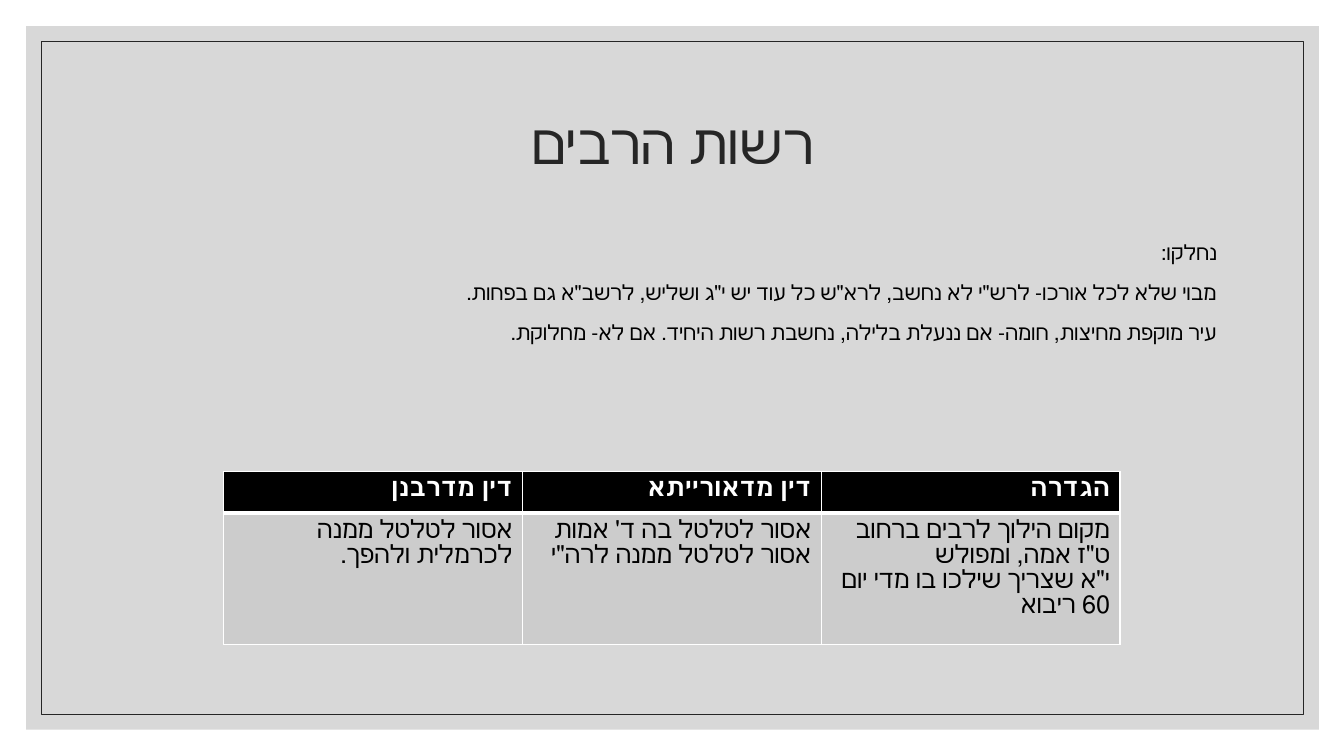
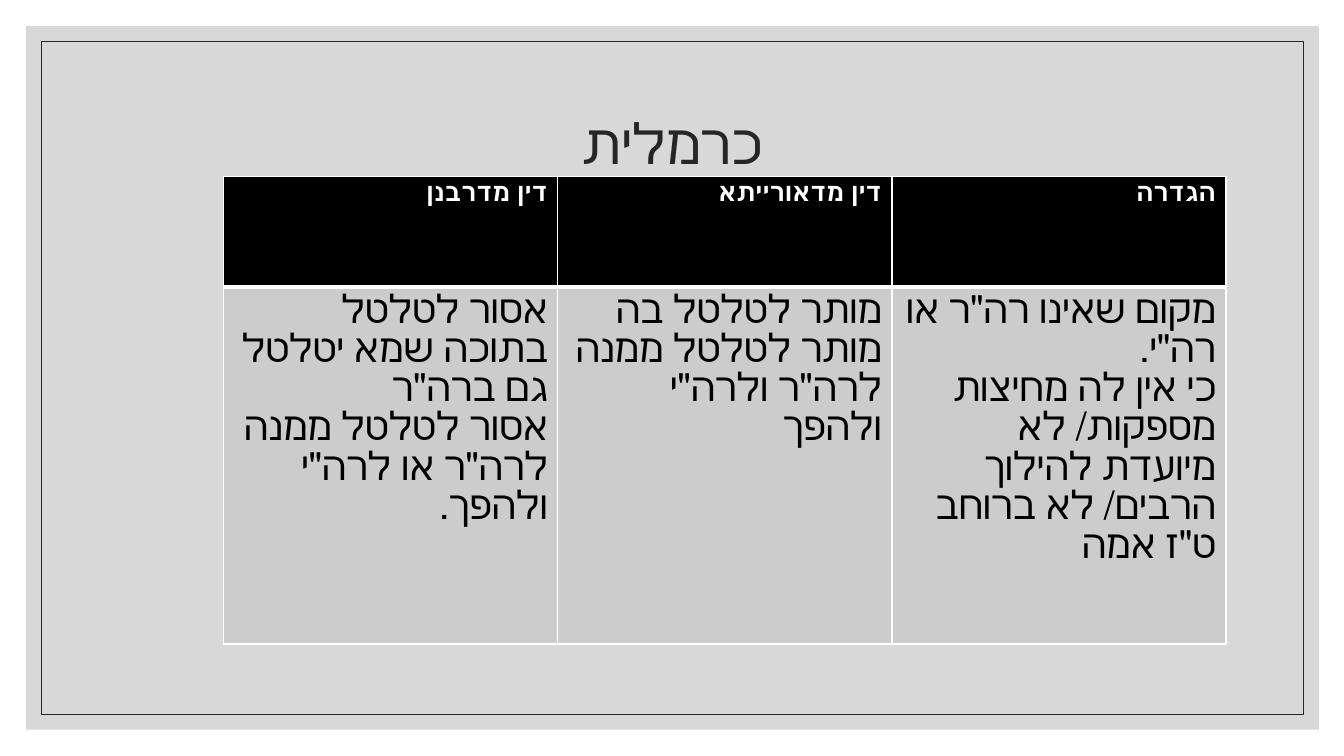
from dataclasses import dataclass

from lxml.etree import SubElement
from pptx import Presentation
from pptx.dml.color import RGBColor
from pptx.enum.lang import MSO_LANGUAGE_ID
from pptx.enum.shapes import MSO_SHAPE
from pptx.enum.text import MSO_ANCHOR, PP_ALIGN
from pptx.oxml import parse_xml
from pptx.oxml.ns import nsdecls, qn
from pptx.util import Inches, Pt


@dataclass(frozen=True)
class Theme:
    font: str = "Arial"
    panel: str = "BFBFBF"
    panel_alpha: int = 60
    ink: str = "262626"
    black: str = "000000"
    white: str = "FFFFFF"
    cell: str = "CCCCCC"
    title_size: int = 40
    body_size: int = 15
    table_size: int = 18
    large_size: int = 28
    thin: int = 1
    thick: int = 3


THEME = Theme()
HEADERS = ["דין מדרבנן", "דין מדאורייתא", "הגדרה"]


def rgb(color):
    return RGBColor.from_string(color)


def write(tf, lines, size, color=THEME.black, bold=False,
          align=PP_ALIGN.RIGHT, spacing=None, before=None):
    """Fill a text frame with right-to-left paragraphs, one per line."""
    tf.word_wrap = True
    for i, line in enumerate(lines):
        p = tf.add_paragraph() if i else tf.paragraphs[0]
        p.alignment = align
        p.line_spacing = spacing
        p.space_before = before
        p._p.get_or_add_pPr().set("rtl", "1")
        r = p.add_run()
        r.text = line
        font = r.font
        font.name = THEME.font
        font.size = Pt(size)
        font.bold = bold
        font.color.rgb = rgb(color)
        font.language_id = MSO_LANGUAGE_ID.HEBREW


def add_box(slide, left, top, width, height):
    box = slide.shapes.add_textbox(*map(Inches, (left, top, width, height)))
    return box.text_frame


def add_rect(slide, left, top, width, height, fill=None, alpha=100, line=None):
    sp = slide.shapes.add_shape(
        MSO_SHAPE.RECTANGLE, *map(Inches, (left, top, width, height)))
    sp.shadow.inherit = False
    if fill:
        sp.fill.solid()
        sp.fill.fore_color.rgb = rgb(fill)
        color = sp.fill._xPr.find(".//" + qn("a:srgbClr"))
        SubElement(color, qn("a:alpha"), val=str(alpha * 1000))
    else:
        sp.fill.background()
    if line:
        sp.line.color.rgb = rgb(line)
        sp.line.width = Pt(0.5)
    else:
        sp.line.fill.background()


def set_borders(cell, top, bottom):
    """Draw white cell borders; top and bottom are widths in points."""
    widths = {"L": THEME.thin, "R": THEME.thin, "T": top, "B": bottom}
    tc_pr = cell._tc.get_or_add_tcPr()
    for i, (side, width) in enumerate(widths.items()):
        tc_pr.insert(i, parse_xml(
            f'<a:ln{side} {nsdecls("a")} w="{Pt(width)}"><a:solidFill>'
            f'<a:srgbClr val="{THEME.white}"/></a:solidFill></a:ln{side}>'))


def format_cell(cell, lines, fill, top, bottom, **text_format):
    cell.fill.solid()
    cell.fill.fore_color.rgb = rgb(fill)
    set_borders(cell, top, bottom)
    write(cell.text_frame, lines, **text_format)


def add_rulings(slide, top, width, row_heights, rulings, size):
    """Add the table of definition and rulings below its header row."""
    frame = slide.shapes.add_table(
        2, len(HEADERS), Inches(2.22), Inches(top),
        Inches(width), Inches(sum(row_heights)))
    table = frame.table
    for row, height in zip(table.rows, row_heights):
        row.height = Inches(height)
    for i, (header, lines) in enumerate(zip(HEADERS, rulings)):
        format_cell(table.cell(0, i), [header], THEME.black,
                    THEME.thin, THEME.thick,
                    size=THEME.table_size, color=THEME.white, bold=True)
        format_cell(table.cell(1, i), lines, THEME.cell,
                    THEME.thick, THEME.thin, size=size)


def add_slide(prs, title):
    slide = prs.slides.add_slide(prs.slide_layouts[6])
    add_rect(slide, 0.26, 0.26, 12.82, 6.98,
             fill=THEME.panel, alpha=THEME.panel_alpha)
    add_rect(slide, 0.41, 0.41, 12.52, 6.68, line=THEME.ink)
    tf = add_box(slide, 1.17, 0.7, 11, 1.5)
    tf.vertical_anchor = MSO_ANCHOR.MIDDLE
    write(tf, [title], THEME.title_size, color=THEME.ink,
          align=PP_ALIGN.CENTER, spacing=0.9)
    return slide


def main():
    prs = Presentation()
    prs.slide_width, prs.slide_height = Inches(13.33), Inches(7.5)

    slide = add_slide(prs, "רשות הרבים")
    write(add_box(slide, 1.17, 2.3, 11, 4.21), [
        "נחלקו:",
        "מבוי שלא לכל אורכו- לרש\"י לא נחשב, לרא\"ש כל עוד יש י\"ג ושליש, לרשב\"א גם בפחות.",
        "עיר מוקפת מחיצות, חומה- אם ננעלת בלילה, נחשבת רשות היחיד. אם לא- מחלוקת.",
    ], THEME.body_size, spacing=1.1, before=Pt(9))
    add_rulings(slide, 4.68, 8.89, [0.41, 1.1], [
        ["אסור לטלטל ממנה לכרמלית ולהפך."],
        ["אסור לטלטל בה ד' אמות", "אסור לטלטל ממנה לרה\"י"],
        ["מקום הילוך לרבים ברחוב ט\"ז אמה, ומפולש",
         "י\"א שצריך שילכו בו מדי יום 60 ריבוא"],
    ], THEME.table_size)

    slide = add_slide(prs, "כרמלית")
    add_rulings(slide, 1.75, 9.94, [1.1, 3.54], [
        ["אסור לטלטל בתוכה שמא יטלטל גם ברה\"ר",
         "אסור לטלטל ממנה לרה\"ר או לרה\"י ולהפך."],
        ["מותר לטלטל בה", "מותר לטלטל ממנה לרה\"ר ולרה\"י ולהפך"],
        ["מקום שאינו רה\"ר או רה\"י.",
         "כי אין לה מחיצות מספקות/ לא מיועדת להילוך הרבים/ לא ברוחב ט\"ז אמה"],
    ], THEME.large_size)

    prs.save("out.pptx")


if __name__ == "__main__":
    main()
